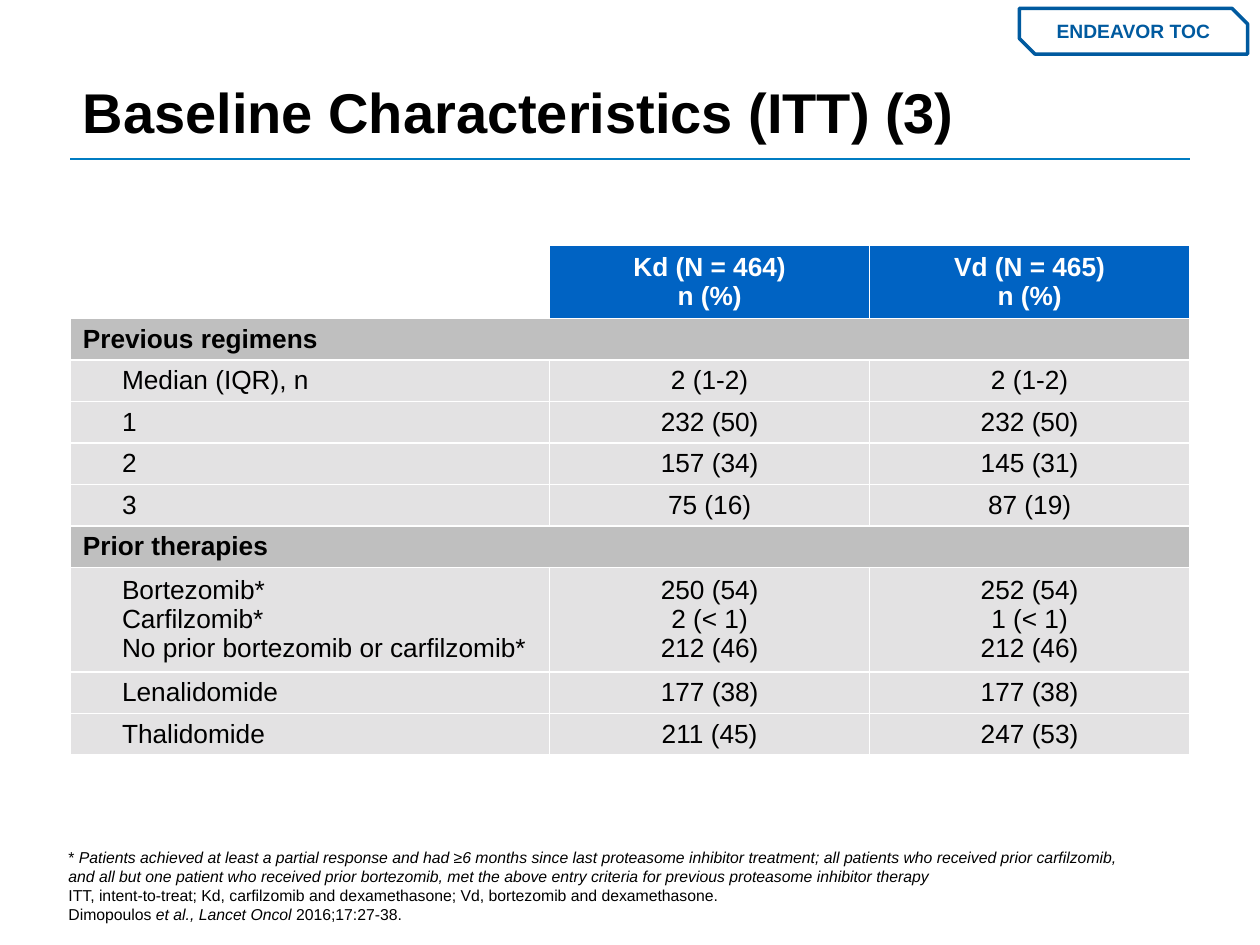
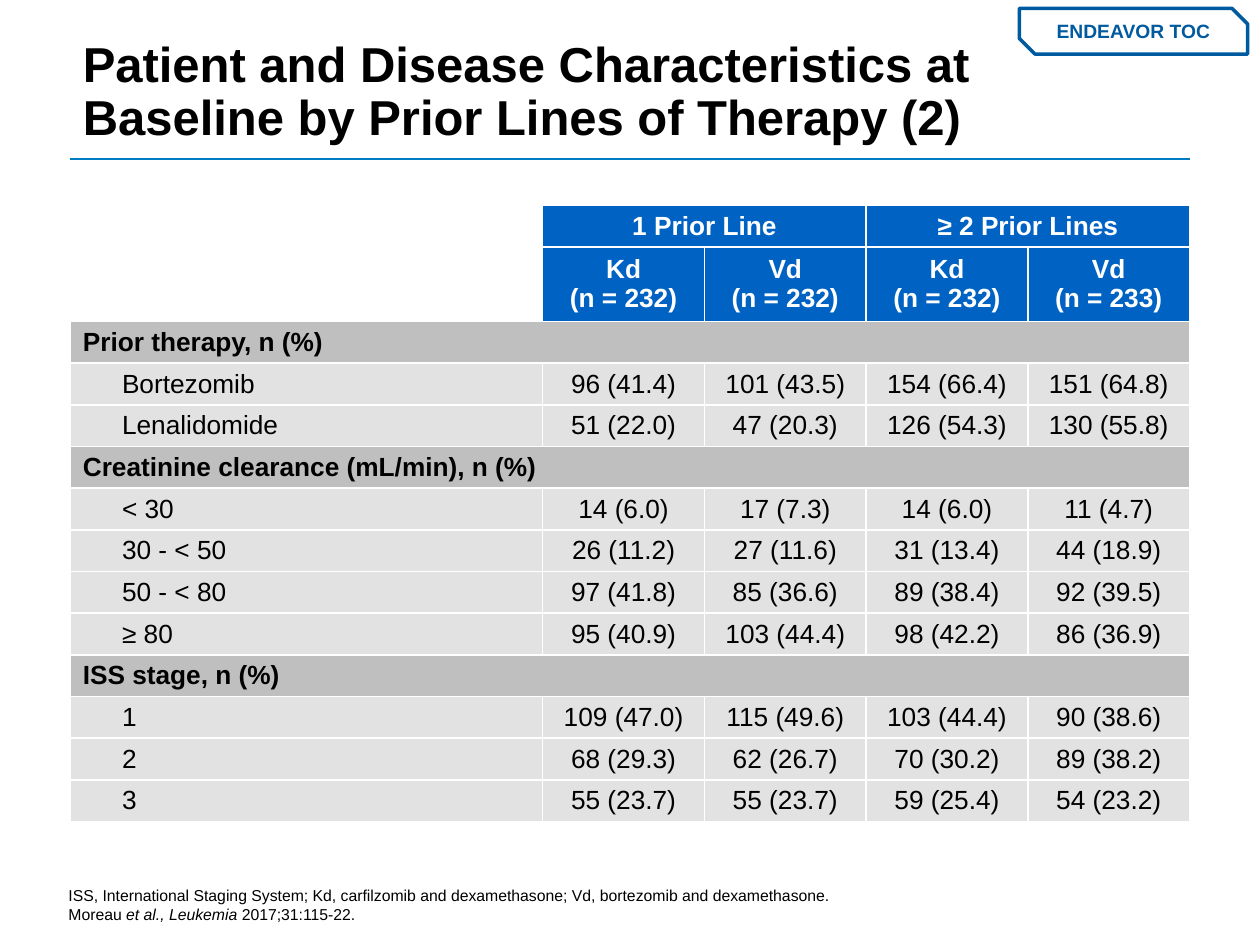
from lxml.etree import SubElement
from pptx import Presentation
from pptx.dml.color import RGBColor
from pptx.enum.shapes import MSO_CONNECTOR, MSO_SHAPE
from pptx.enum.text import MSO_ANCHOR, MSO_AUTO_SIZE, PP_ALIGN
from pptx.oxml.ns import qn
from pptx.util import Cm, Pt

# Shared look
FONT = "Arial"
BLACK, WHITE = "000000", "FFFFFF"
RULE_BLUE, BADGE_BLUE, HEADER_BLUE = "007CC2", "005A9F", "0063C3"
SECTION_GREY, ROW_GREY = "BFBFBF", "E3E2E3"
LEFT, WIDTH = 1.42, 22.56
TABLE_SIZE = 15
ROW_INDENT = 0.79

# Slide 1 content
REGIMEN_HEADER = [("", "Kd (N = 464)\nn (%)", "Vd (N = 465)\nn (%)")]
REGIMEN_ROWS = [
    ("Previous regimens",),
    ("Median (IQR), n", "2 (1-2)", "2 (1-2)"),
    ("1", "232 (50)", "232 (50)"),
    ("2", "157 (34)", "145 (31)"),
    ("3", "75 (16)", "87 (19)"),
    ("Prior therapies",),
    ("Bortezomib*\nCarfilzomib*\nNo prior bortezomib or carfilzomib*",
     "250 (54)\n2 (< 1)\n212 (46)", "252 (54)\n1 (< 1)\n212 (46)"),
    ("Lenalidomide", "177 (38)", "177 (38)"),
    ("Thalidomide", "211 (45)", "247 (53)"),
]
# Each footnote line is a list of (text, italic) pieces
REGIMEN_NOTES = [
    [("*", False),
     (" Patients achieved at least a partial response and had ≥6 months since last "
      "proteasome inhibitor treatment; all patients who received prior carfilzomib, "
      "and all but one patient who received prior bortezomib, met the above entry "
      "criteria for previous proteasome inhibitor therapy", True)],
    [("ITT, intent-to-treat; Kd, carfilzomib and dexamethasone; "
      "Vd, bortezomib and dexamethasone.", False)],
    [("Dimopoulos ", False), ("et al., Lancet Oncol", True), (" 2016;17:27-38.", False)],
]

# Slide 2 content
LINES_HEADER = [
    ("", "1 Prior Line", "", "≥ 2 Prior Lines", ""),
    ("", "Kd\n(n = 232)", "Vd\n(n = 232)", "Kd\n(n = 232)", "Vd\n(n = 233)"),
]
LINES_MERGES = [((0, 0), (1, 0)), ((0, 1), (0, 2)), ((0, 3), (0, 4))]
LINES_ROWS = [
    ("Prior therapy, n (%)",),
    ("Bortezomib", "96 (41.4)", "101 (43.5)", "154 (66.4)", "151 (64.8)"),
    ("Lenalidomide", "51 (22.0)", "47 (20.3)", "126 (54.3)", "130 (55.8)"),
    ("Creatinine clearance (mL/min), n (%)",),
    ("< 30", "14 (6.0)", "17 (7.3)", "14 (6.0)", "11 (4.7)"),
    ("30 - < 50", "26 (11.2)", "27 (11.6)", "31 (13.4)", "44 (18.9)"),
    ("50 - < 80", "97 (41.8)", "85 (36.6)", "89 (38.4)", "92 (39.5)"),
    ("≥ 80", "95 (40.9)", "103 (44.4)", "98 (42.2)", "86 (36.9)"),
    ("ISS stage, n (%)",),
    ("1", "109 (47.0)", "115 (49.6)", "103 (44.4)", "90 (38.6)"),
    ("2", "68 (29.3)", "62 (26.7)", "70 (30.2)", "89 (38.2)"),
    ("3", "55 (23.7)", "55 (23.7)", "59 (25.4)", "54 (23.2)"),
]
LINES_NOTES = [
    [("ISS, International Staging System; Kd, carfilzomib and dexamethasone; "
      "Vd, bortezomib and dexamethasone.", False)],
    [("Moreau ", False), ("et al., Leukemia ", True), ("2017;31:115-22.", False)],
]


def color(hex_code):
    return RGBColor.from_string(hex_code)


def style_run(r, size, hex_code=BLACK, bold=False, italic=False):
    r.font.name = FONT
    r.font.size = Pt(size)
    r.font.color.rgb = color(hex_code)
    r.font.bold = bold
    r.font.italic = italic


def add_text_box(s, left, top, width, height):
    tf = s.shapes.add_textbox(Cm(left), Cm(top), Cm(width), Cm(height)).text_frame
    tf.word_wrap = True
    tf.vertical_anchor = MSO_ANCHOR.BOTTOM
    return tf


def add_title(s, text, size):
    p = add_text_box(s, LEFT, 0, WIDTH, 3.07).paragraphs[0]
    p.text = text
    p.line_spacing = 0.9
    style_run(p.runs[0], size, bold=True)


def add_rule(s):
    y = Cm(3.2)
    line = s.shapes.add_connector(MSO_CONNECTOR.STRAIGHT, Cm(LEFT), y, Cm(LEFT + WIDTH), y)
    line.line.color.rgb = color(RULE_BLUE)
    line.line.width = Pt(1)
    SubElement(line._element.spPr, qn("a:effectLst"))


def add_badge(s):
    sp = s.shapes.add_shape(MSO_SHAPE.SNIP_2_DIAG_RECTANGLE,
                            Cm(20.55), Cm(0.17), Cm(4.6), Cm(0.92))
    sp.shadow.inherit = False
    sp.adjustments[0], sp.adjustments[1] = 0, 0.34
    sp.fill.background()
    sp.line.color.rgb = color(BADGE_BLUE)
    sp.line.width = Pt(2)
    tf = sp.text_frame
    tf.word_wrap = False
    tf.vertical_anchor = MSO_ANCHOR.MIDDLE
    p = tf.paragraphs[0]
    p.text = "ENDEAVOR TOC"
    p.alignment = PP_ALIGN.CENTER
    style_run(p.runs[0], 11, BADGE_BLUE, bold=True)


def add_footnotes(s, notes, top, height):
    tf = add_text_box(s, 1.13, top, 21.87, height)
    tf.auto_size = MSO_AUTO_SIZE.SHAPE_TO_FIT_TEXT
    for i, pieces in enumerate(notes):
        p = tf.add_paragraph() if i else tf.paragraphs[0]
        for text, italic in pieces:
            r = p.add_run()
            r.text = text
            style_run(r, 9, italic=italic)


def add_borders(cell):
    tc_pr = cell._tc.get_or_add_tcPr()
    for side in ("lnL", "lnR", "lnT", "lnB"):
        ln = SubElement(tc_pr, qn(f"a:{side}"), w=str(Pt(1)))
        SubElement(SubElement(ln, qn("a:solidFill")), qn("a:srgbClr"), val=WHITE)


def fill_cell(cell, text, fill, font_color=BLACK, bold=False, centered=True, indent=0):
    add_borders(cell)
    if fill:
        cell.fill.solid()
        cell.fill.fore_color.rgb = color(fill)
    else:
        cell.fill.background()
    cell.vertical_anchor = MSO_ANCHOR.MIDDLE
    cell.margin_left = cell.margin_right = Cm(0.25)
    cell.margin_top = cell.margin_bottom = Cm(0.1)
    cell.text_frame.text = text
    for p in cell.text_frame.paragraphs:
        p.alignment = PP_ALIGN.CENTER if centered else PP_ALIGN.LEFT
        if indent:
            p._p.get_or_add_pPr().set("marL", str(Cm(indent)))
        for r in p.runs:
            style_run(r, TABLE_SIZE, font_color, bold)
        if not text:
            SubElement(p._p, qn("a:endParaRPr"), sz=str(TABLE_SIZE * 100))


def add_data_table(s, top, widths, heights, header, rows, merges=()):
    table = s.shapes.add_table(len(heights), len(widths), Cm(LEFT), Cm(top),
                               Cm(sum(widths)), Cm(sum(heights))).table
    table.first_row = table.horz_banding = False
    for column, width in zip(table.columns, widths):
        column.width = Cm(width)
    for row, height in zip(table.rows, heights):
        row.height = Cm(height)

    # Header rows; the corner stays clear
    for i, labels in enumerate(header):
        for j, label in enumerate(labels):
            fill_cell(table.cell(i, j), label, HEADER_BLUE if j else None, WHITE, bold=True)
    for first, last in merges:
        table.cell(*first).merge(table.cell(*last))

    # Section rows span the table, the others hold a label and its values
    last_col = len(widths) - 1
    for i, values in enumerate(rows, len(header)):
        if len(values) == 1:
            for j in range(last_col + 1):
                fill_cell(table.cell(i, j), "" if j else values[0], SECTION_GREY,
                          bold=True, centered=False)
            table.cell(i, 0).merge(table.cell(i, last_col))
            continue
        for j, value in enumerate(values):
            fill_cell(table.cell(i, j), value, ROW_GREY, centered=j > 0,
                      indent=0 if j else ROW_INDENT)


def add_base_slide(prs, title, size):
    s = prs.slides.add_slide(prs.slide_layouts[6])
    add_rule(s)
    add_title(s, title, size)
    add_badge(s)
    return s


def main():
    prs = Presentation()
    prs.slide_width, prs.slide_height = Cm(25.4), Cm(19.05)

    # Slide 1: earlier treatment in the whole study
    s = add_base_slide(prs, "Baseline Characteristics (ITT) (3)", 32)
    add_data_table(s, 4.95, [9.66, 6.45, 6.45], [1.39] + [0.81] * 6 + [1.97] + [0.81] * 2,
                   REGIMEN_HEADER, REGIMEN_ROWS)
    add_footnotes(s, REGIMEN_NOTES, 16.94, 1.8)

    # Slide 2: patients by number of prior lines
    s = add_base_slide(prs, "Patient and Disease Characteristics at Baseline "
                            "by Prior Lines of Therapy (2)", 28)
    add_data_table(s, 4.14, [9.52] + [3.26] * 4, [0.84, 1.5] + [0.84] * 12,
                   LINES_HEADER, LINES_ROWS, LINES_MERGES)
    add_footnotes(s, LINES_NOTES, 17.73, 1.02)

    prs.save("out.pptx")


if __name__ == "__main__":
    main()
